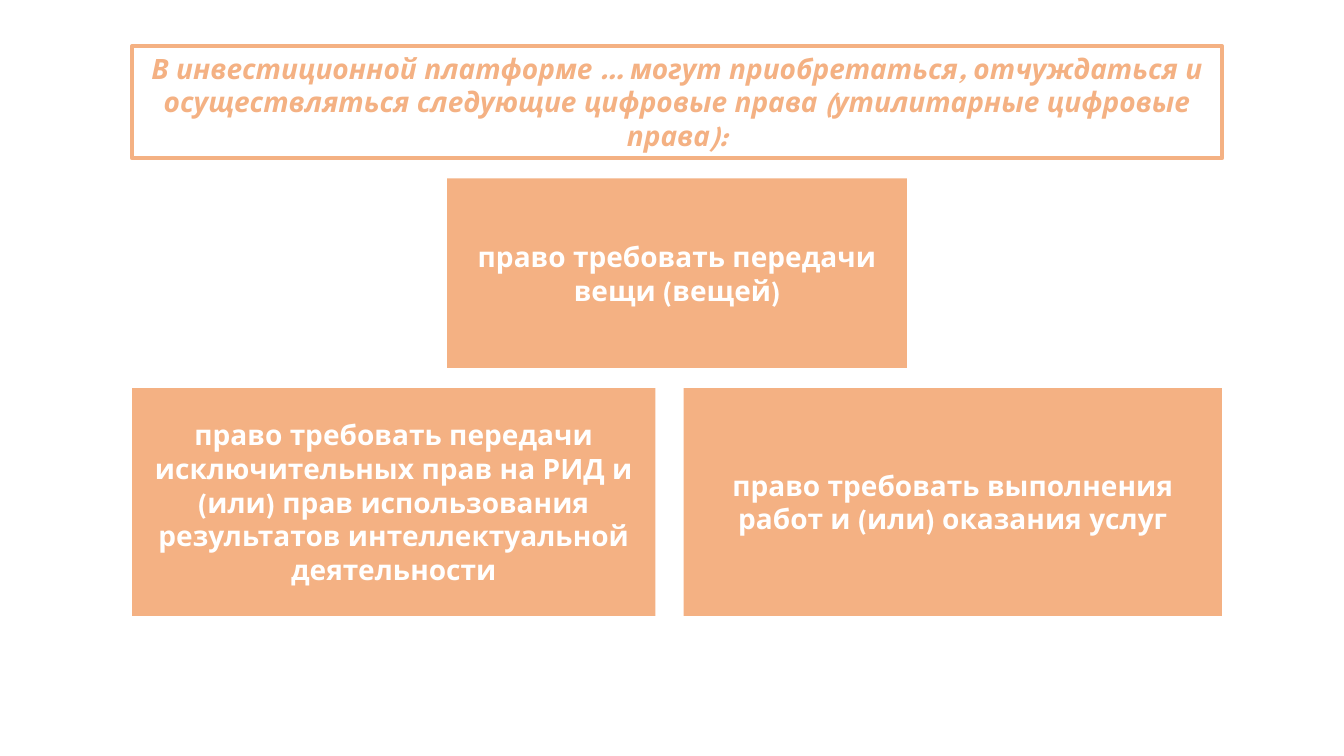
"""Build a slide on the utilitarian digital rights of an investment platform."""
import pptx
import pptx.util
import pptx.dml.color
import pptx.enum.shapes
import pptx.enum.text

Inches = pptx.util.Inches
COLOURS = {"peach": "F4B183", "white": "FFFFFF"}
FONT = "League Spartan"
HEADING = (
    "В инвестиционной платформе … могут приобретаться, отчуждаться и "
    "осуществляться следующие цифровые права (утилитарные цифровые права):"
)
THING_RIGHT = "право требовать передачи вещи (вещей)"
IP_RIGHT = (
    "право требовать передачи исключительных прав на РИД и (или) прав "
    "использования результатов интеллектуальной деятельности"
)
SERVICE_RIGHT = "право требовать выполнения работ и (или) оказания услуг"

LEFT, WIDTH = 1.31, 10.81
HEADING_TOP, HEADING_HEIGHT = 0.46, 1.11
GAP = 0.2
THING_WIDTH, THING_HEIGHT = 4.56, 1.88
IP_WIDTH, SERVICE_WIDTH, LOWER_HEIGHT = 5.19, 5.34, 2.26


def colour(name):
    """Return the named colour."""
    return pptx.dml.color.RGBColor.from_string(COLOURS[name])


def add_box(slide, text, left, top, width, height, outlined=False):
    """Add a filled or outlined rectangle with centred text."""
    box = slide.shapes.add_shape(
        pptx.enum.shapes.MSO_SHAPE.RECTANGLE,
        Inches(left), Inches(top), Inches(width), Inches(height),
    )
    box.shadow.inherit = False
    frame = box.text_frame
    frame.word_wrap = True
    if outlined:
        box.fill.background()
        box.line.color.rgb = colour("peach")
        box.line.width = pptx.util.Pt(3)
        frame.vertical_anchor = pptx.enum.text.MSO_ANCHOR.TOP
        frame.auto_size = pptx.enum.text.MSO_AUTO_SIZE.SHAPE_TO_FIT_TEXT
    else:
        box.fill.solid()
        box.fill.fore_color.rgb = colour("peach")
        box.line.fill.background()
        frame.vertical_anchor = pptx.enum.text.MSO_ANCHOR.MIDDLE
    frame.text = text
    paragraph = frame.paragraphs[0]
    paragraph.alignment = pptx.enum.text.PP_ALIGN.CENTER
    font = paragraph.font
    font.name = FONT
    font.size = pptx.util.Pt(20)
    font.bold = True
    font.italic = outlined
    font.color.rgb = colour("peach" if outlined else "white")


def main():
    """Lay out the heading and the three rights, then save."""
    deck = pptx.Presentation()
    deck.slide_width, deck.slide_height = Inches(13.33), Inches(7.5)
    slide = deck.slides.add_slide(deck.slide_layouts[6])

    thing_left = LEFT + (WIDTH - THING_WIDTH) / 2
    thing_top = HEADING_TOP + HEADING_HEIGHT + GAP
    lower_top = thing_top + THING_HEIGHT + GAP
    service_left = LEFT + WIDTH - SERVICE_WIDTH

    add_box(slide, THING_RIGHT, thing_left, thing_top, THING_WIDTH, THING_HEIGHT)
    add_box(slide, IP_RIGHT, LEFT, lower_top, IP_WIDTH, LOWER_HEIGHT)
    add_box(slide, SERVICE_RIGHT, service_left, lower_top, SERVICE_WIDTH, LOWER_HEIGHT)
    add_box(slide, HEADING, LEFT, HEADING_TOP, WIDTH, HEADING_HEIGHT, outlined=True)
    deck.save("out.pptx")


if __name__ == "__main__":
    main()
